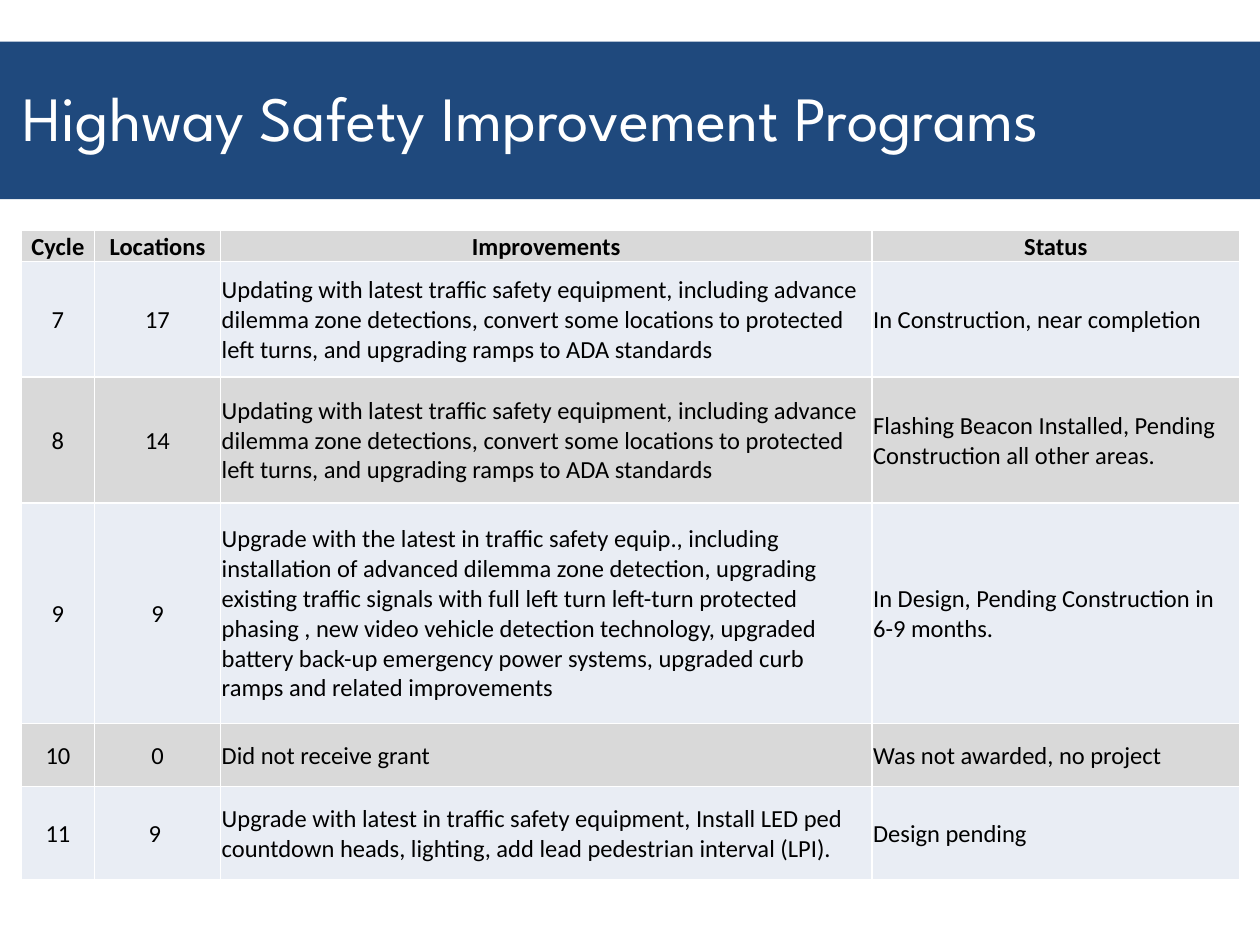
"""Build the Highway Safety Improvement Programs slide."""
from lxml.etree import SubElement
from pptx import Presentation
from pptx.dml.color import RGBColor
from pptx.enum.shapes import MSO_SHAPE
from pptx.enum.text import MSO_ANCHOR, PP_ALIGN
from pptx.oxml.ns import qn
from pptx.util import Inches, Pt


def rgb(value):
    return RGBColor.from_string(value)


def write(tf, text, size=14, font="Calibri", color="000000", bold=False, align=PP_ALIGN.LEFT):
    p = tf.paragraphs[0]
    p.alignment = align
    r = p.add_run()
    r.text = text
    r.font.size, r.font.name, r.font.bold = Pt(size), font, bold
    r.font.color.rgb = rgb(color)


GRAY, PALE, WHITE, NAVY = "D9D9D9", "E9EDF4", "FFFFFF", "1F497D"
COLS = [0.58, 1, 5.17, 2.92]
ROWS = [0.24, 0.92, 1, 1.75, 0.5, 0.74]
SIGNALS = (
    "Updating with latest traffic safety equipment, including advance dilemma zone detections, "
    "convert some locations to protected left turns, and upgrading ramps to ADA standards"
)
DATA = [
    ("Cycle", "Locations", "Improvements", "Status"),
    ("7", "17", SIGNALS, "In Construction, near completion"),
    ("8", "14", SIGNALS, "Flashing Beacon Installed, Pending Construction all other areas."),
    (
        "9",
        "9",
        "Upgrade with the latest in traffic safety equip., including installation of advanced "
        "dilemma zone detection, upgrading existing traffic signals with full left turn left-turn "
        "protected phasing , new video vehicle detection technology, upgraded battery back-up "
        "emergency power systems, upgraded curb ramps and related improvements",
        "In Design, Pending Construction in 6-9 months.",
    ),
    ("10", "0", "Did not receive grant", "Was not awarded, no project"),
    (
        "11",
        "9 ",
        "Upgrade with latest in traffic safety equipment, Install LED ped countdown heads, "
        "lighting, add lead pedestrian interval (LPI).",
        "Design pending",
    ),
]

prs = Presentation()
prs.slide_width, prs.slide_height = Inches(10), Inches(7.5)
s = prs.slides.add_slide(prs.slide_layouts[6])

sp = s.shapes.add_shape(MSO_SHAPE.RECTANGLE, 0, Inches(0.33), prs.slide_width, Inches(1.25))
sp.shadow.inherit = False
sp.fill.solid()
sp.fill.fore_color.rgb = rgb(NAVY)
sp.line.fill.background()

title = s.shapes.add_textbox(Inches(0.08), Inches(0.3), Inches(9.92), Inches(1.25))
tf = title.text_frame
tf.word_wrap = True
tf.vertical_anchor = MSO_ANCHOR.MIDDLE
write(tf, "Highway Safety Improvement Programs", size=36, font="League Spartan", color=WHITE)

table = s.shapes.add_table(
    len(ROWS), len(COLS), Inches(0.17), Inches(1.83), Inches(sum(COLS)), Inches(sum(ROWS))
).table
for col, width in zip(table.columns, COLS):
    col.width = Inches(width)
for row, height in zip(table.rows, ROWS):
    row.height = Inches(height)

for i, texts in enumerate(DATA):
    for j, text in enumerate(texts):
        cell = table.cell(i, j)
        cell.vertical_anchor = MSO_ANCHOR.MIDDLE
        cell.margin_left = cell.margin_right = cell.margin_top = Inches(0.01)
        cell.margin_bottom = 0
        tcPr = cell._tc.get_or_add_tcPr()
        for side in ("a:lnL", "a:lnR", "a:lnT", "a:lnB"):
            ln = SubElement(tcPr, qn(side), w=str(Pt(1)))
            SubElement(SubElement(ln, qn("a:solidFill")), qn("a:srgbClr"), val=WHITE)
        cell.fill.solid()
        cell.fill.fore_color.rgb = rgb(PALE if i % 2 else GRAY)
        centered = i == 0 or j < 2
        write(
            cell.text_frame,
            text,
            bold=i == 0,
            align=PP_ALIGN.CENTER if centered else PP_ALIGN.LEFT,
        )

prs.save("out.pptx")
